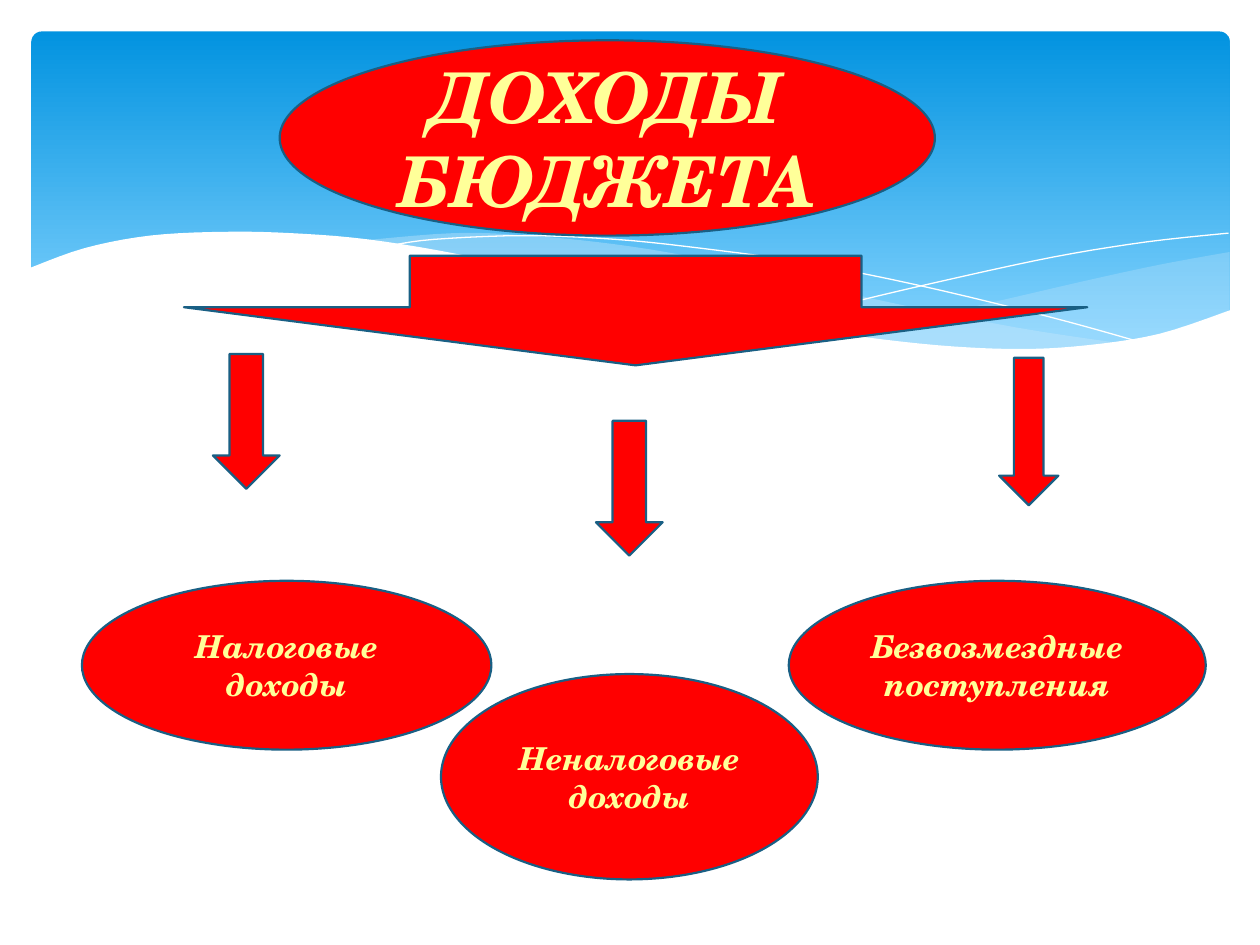
"""Build the slide on the sources of budget revenue."""
from dataclasses import dataclass
from typing import Optional

from lxml.etree import SubElement
from pptx import Presentation
from pptx.dml.color import RGBColor
from pptx.enum.shapes import MSO_SHAPE
from pptx.enum.text import MSO_ANCHOR, PP_ALIGN
from pptx.oxml.ns import qn
from pptx.util import Inches, Pt

Point = tuple[float, float]
Curve = list[Point]


@dataclass(frozen=True)
class Theme:
    font: str = "TeX Gyre Schola"
    red: str = "FF0000"
    outline: str = "195F84"
    text: str = "FFFF99"
    sky_top: str = "0293E0"
    sky_bottom: str = "83D3FE"
    mist: str = "C6E7FC"
    white: str = "FFFFFF"
    title_size: float = 40
    label_size: float = 18
    outline_width: float = 1.25


@dataclass(frozen=True)
class Box:
    left: float
    top: float
    width: float
    height: float


@dataclass(frozen=True)
class Oval:
    text: str
    box: Box
    size: float


@dataclass(frozen=True)
class Arrow:
    box: Box
    head: float = 0.5


@dataclass(frozen=True)
class Wave:
    curves: list[Curve]
    fill: Optional[str] = None
    opacity: int = 100


THEME = Theme()

WAVES = [
    Wave([[(9.76, 2), (9.21, 2.1), (8.61, 2.23), (7.79, 2.42), (7.29, 2.53), (6.61, 2.65)],
          [(6.61, 2.65), (7.05, 2.71), (7.57, 2.76), (8.14, 2.78), (8.72, 2.74),
           (9.21, 2.65), (9.76, 2.47)]], THEME.mist, 29),
    Wave([[(8.93, 2.73), (8.07, 2.6), (7.06, 2.4), (6.29, 2.22), (5.55, 2.05),
           (4.89, 1.94), (4.2, 1.87), (3.61, 1.85), (2.86, 1.91)],
          [(2.86, 1.91), (3.62, 2.03), (4.49, 2.22), (5.3, 2.4), (6.01, 2.55),
           (6.65, 2.66), (7.36, 2.75), (8.07, 2.78), (8.93, 2.73)]], THEME.mist, 40),
    Wave([[(3.09, 1.95), (3.44, 1.9), (4.16, 1.87), (4.89, 1.9), (5.56, 1.97),
           (6.36, 2.08), (7.27, 2.26), (8.31, 2.51), (9.07, 2.72)]]),
    Wave([[(6.13, 2.57), (6.72, 2.41), (7.48, 2.23), (8.36, 2.04), (9.1, 1.92), (9.75, 1.85)]]),
    Wave([[(9.77, 2.46), (9.2, 2.65), (8.63, 2.74), (8.09, 2.77), (7.44, 2.74),
           (6.68, 2.65), (5.79, 2.5), (5.03, 2.33), (4.47, 2.2), (3.65, 2.02),
           (2.92, 1.9), (2.3, 1.85), (1.77, 1.84), (1.19, 1.87), (0.67, 1.97), (0.23, 2.13)],
          [(0.23, 3.29), (9.77, 3.29)]], THEME.white),
]

ARROWS = [
    Arrow(Box(1.46, 2.03, 7.17, 0.87), 0.53),
    Arrow(Box(1.69, 2.81, 0.53, 1.07)),
    Arrow(Box(4.73, 3.34, 0.53, 1.07)),
    Arrow(Box(7.93, 2.84, 0.47, 1.17)),
]

OVALS = [
    Oval("ДОХОДЫ БЮДЖЕТА", Box(2.22, 0.32, 5.2, 1.55), THEME.title_size),
    Oval("Налоговые доходы", Box(0.65, 4.61, 3.25, 1.34), THEME.label_size),
    Oval("Неналоговые доходы", Box(3.5, 5.35, 2.99, 1.63), THEME.label_size),
    Oval("Безвозмездные поступления", Box(6.26, 4.61, 3.31, 1.34), THEME.label_size),
]


def rgb(code: str) -> RGBColor:
    """Turn a hex code into a colour."""
    return RGBColor.from_string(code)


def smooth(knots: Curve, steps: int = 5) -> Curve:
    """Run a Catmull-Rom curve through the knots."""
    padded = [knots[0], *knots, knots[-1]]
    points = [knots[0]]
    for a, b, c, d in zip(padded, padded[1:], padded[2:], padded[3:]):
        for step in range(1, steps + 1):
            t = step / steps
            x, y = (
                q + t * (r - p + t * (2 * p - 5 * q + 4 * r - s + t * (3 * (q - r) + s - p))) / 2
                for p, q, r, s in zip(a, b, c, d)
            )
            points.append((x, y))
    return points


def add_preset(slide, kind: MSO_SHAPE, box: Box):
    """Add a shadowless preset shape."""
    shape = slide.shapes.add_shape(
        kind, Inches(box.left), Inches(box.top), Inches(box.width), Inches(box.height))
    shape.shadow.inherit = False
    return shape


def paint_red(shape) -> None:
    """Give a shape the red fill and dark blue outline."""
    shape.fill.solid()
    shape.fill.fore_color.rgb = rgb(THEME.red)
    shape.line.color.rgb = rgb(THEME.outline)
    shape.line.width = Pt(THEME.outline_width)


def write(shape, text: str, *, size: float, color: str = THEME.text,
          bold: bool = True, italic: bool = True) -> None:
    """Write centred text in a shape."""
    frame = shape.text_frame
    frame.word_wrap = True
    frame.vertical_anchor = MSO_ANCHOR.MIDDLE
    paragraph = frame.paragraphs[0]
    paragraph.alignment = PP_ALIGN.CENTER
    run = paragraph.add_run()
    run.text = text
    run.font.name = THEME.font
    run.font.size = Pt(size)
    run.font.bold = bold
    run.font.italic = italic
    run.font.color.rgb = rgb(color)


def draw_sky(slide) -> None:
    """Draw the rounded gradient panel."""
    sky = add_preset(slide, MSO_SHAPE.ROUNDED_RECTANGLE, Box(0.25, 0.25, 9.51, 2.7))
    sky.adjustments[0] = 0.03
    sky.line.fill.background()
    sky.fill.gradient()
    sky.fill.gradient_angle = 270
    colors = (THEME.sky_top, THEME.sky_bottom)
    for stop, color, position in zip(sky.fill.gradient_stops, colors, (0, 0.9)):
        stop.color.rgb = rgb(color)
        stop.position = position


def draw_wave(slide, wave: Wave) -> None:
    """Draw a filled wave, or a white hairline when it has no fill."""
    points = [(Inches(x), Inches(y)) for curve in wave.curves for x, y in smooth(curve)]
    builder = slide.shapes.build_freeform(*points[0])
    builder.add_line_segments(points[1:], close=wave.fill is not None)
    shape = builder.convert_to_shape()
    shape.shadow.inherit = False
    if wave.fill is None:
        shape.fill.background()
        shape.line.color.rgb = rgb(THEME.white)
        shape.line.width = Pt(0)
        return
    shape.fill.solid()
    shape.fill.fore_color.rgb = rgb(wave.fill)
    shape.line.fill.background()
    if wave.opacity < 100:
        color = shape._element.spPr.find(".//" + qn("a:srgbClr"))
        SubElement(color, qn("a:alpha"), val=str(wave.opacity * 1000))


def draw_arrow(slide, arrow: Arrow) -> None:
    """Draw a red arrow pointing down."""
    shape = add_preset(slide, MSO_SHAPE.DOWN_ARROW, arrow.box)
    shape.adjustments[1] = arrow.head
    paint_red(shape)


def draw_oval(slide, oval: Oval) -> None:
    """Draw a red oval with its label."""
    shape = add_preset(slide, MSO_SHAPE.OVAL, oval.box)
    paint_red(shape)
    write(shape, oval.text, size=oval.size)


def main() -> None:
    """Build and save the presentation."""
    deck = Presentation()
    deck.slide_width, deck.slide_height = Inches(10), Inches(7.5)
    slide = deck.slides.add_slide(deck.slide_layouts[6])
    draw_sky(slide)
    for wave in WAVES:
        draw_wave(slide, wave)
    for arrow in ARROWS:
        draw_arrow(slide, arrow)
    for oval in OVALS:
        draw_oval(slide, oval)
    deck.save("out.pptx")


if __name__ == "__main__":
    main()
